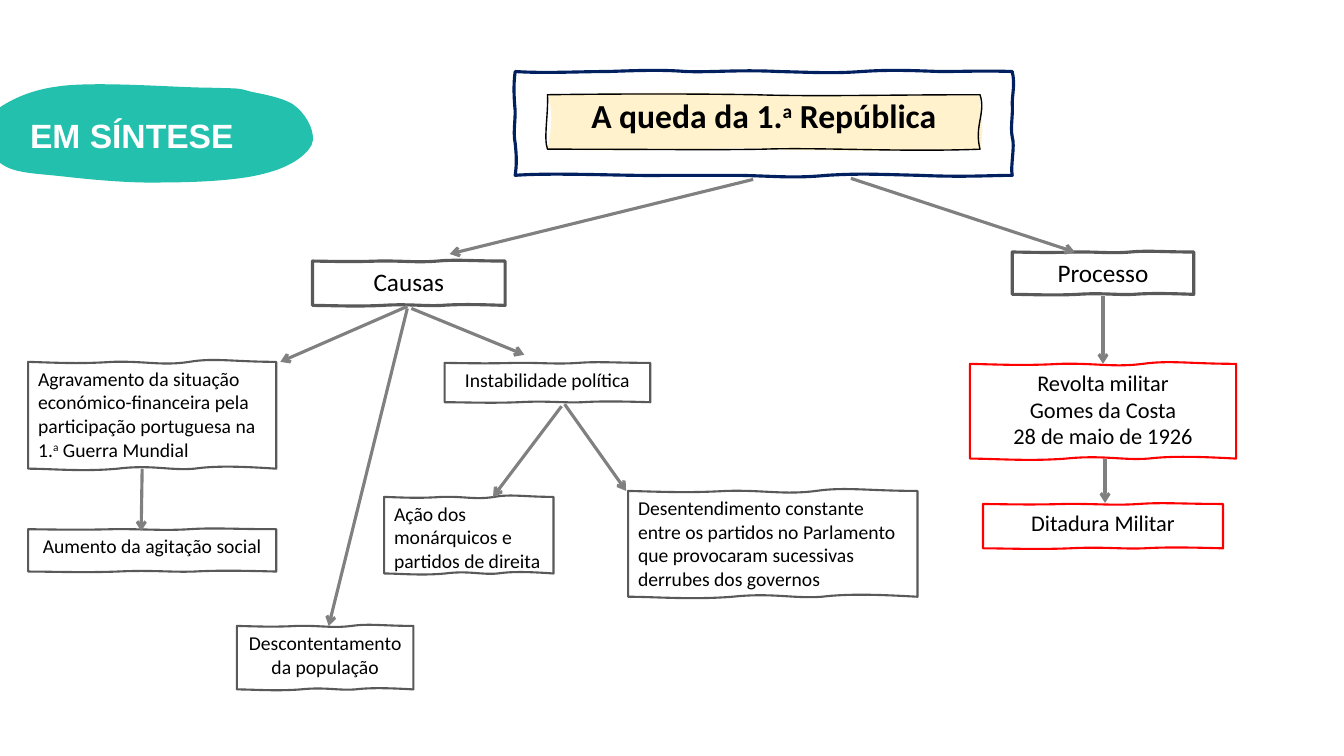
from lxml.etree import SubElement
from pptx import Presentation
from pptx.dml.color import RGBColor
from pptx.enum.shapes import MSO_CONNECTOR as Connector
from pptx.enum.text import MSO_ANCHOR as Anchor, PP_ALIGN as Align
from pptx.oxml.ns import qn
from pptx.util import Inches, Pt

COLOURS = {"teal": "22C0AD", "navy": "002060", "cream": "FFF2CC", "black": "000000",
           "white": "FFFFFF", "grey": "595959", "arrow": "808080", "red": "FF0000"}

# Text between ^ marks is superscript; a line break starts a new paragraph
HEADING = "EM SÍNTESE"
TITLE = "A queda da 1.^a^ República"

# Kinds of box: line colour, line width, text size
KINDS = {"branch": ("grey", 2.25, 18), "cause": ("grey", 1.5, 14), "event": ("red", 1.5, 16)}

# kind, alignment, (left, top, width, height), text
BOXES = [
    ("branch", Align.CENTER, (3.1, 2.59, 1.91, 0.44), "Causas"),
    ("branch", Align.CENTER, (10.04, 2.5, 1.8, 0.42), "Processo"),
    ("cause", Align.LEFT, (0.28, 3.59, 2.46, 1.06),
     "Agravamento da situação económico-financeira pela participação portuguesa na 1.^a^ Guerra Mundial"),
    ("cause", Align.CENTER, (0.28, 5.25, 2.46, 0.42), "Aumento da agitação social"),
    ("cause", Align.CENTER, (2.35, 6.21, 1.75, 0.63), "Descontentamento da população"),
    ("cause", Align.CENTER, (4.41, 3.6, 2.04, 0.39), "Instabilidade política"),
    ("cause", Align.LEFT, (3.81, 4.93, 1.68, 0.76), "Ação dos monárquicos e partidos de direita"),
    ("cause", Align.LEFT, (6.23, 4.87, 2.87, 1.05),
     "Desentendimento constante entre os partidos no Parlamento "
     "que provocaram sucessivas derrubes dos governos"),
    ("event", Align.CENTER, (9.62, 3.61, 2.64, 0.94),
     "Revolta militar\nGomes da Costa\n28 de maio de 1926"),
    ("event", Align.CENTER, (9.75, 5, 2.38, 0.44), "Ditadura Militar"),
]

# x and y of the start, x and y of the head
ARROWS = [
    (7.47, 1.78, 4.46, 2.52), (8.44, 1.77, 10.66, 2.5),
    (4.04, 3.04, 2.78, 3.59), (4.04, 3.06, 3.26, 6.21), (4.08, 3.06, 5.2, 3.52),
    (1.41, 4.65, 1.4, 5.27), (5.57, 4.03, 4.89, 4.93), (5.6, 4.01, 6.21, 4.87),
    (10.94, 2.94, 10.94, 3.61), (10.96, 4.55, 10.96, 4.99),
]

# Hand-drawn outlines: start point, then Bézier curves (two controls and an end)
SKETCH = [(0, 0),  # shares of the box's width and height
          (.13, .01), (.21, .02), (.34, 0), (.47, -.01), (.54, .04), (.65, 0),
          (.75, -.04), (.83, 0), (1, 0), (1, .23), (1, .33), (1, .51),
          (1, .68), (1, .84), (1, 1), (.87, .98), (.76, .97), (.67, 1),
          (.57, 1.02), (.5, .96), (.36, 1), (.22, 1.03), (.09, 1), (0, 1),
          (0, .81), (0, .63), (0, .5), (0, .37), (0, .2), (0, 0)]
BLOB = [(2.07, .87),
        (1.75, .87), (.93, .8), (.56, .86), (.18, .91), (-.09, 1.1), (-.18, 1.23),
        (-.27, 1.36), (-.11, 1.54), (.02, 1.63), (.15, 1.72), (.35, 1.72), (.62, 1.75),
        (.89, 1.78), (1.28, 1.82), (1.62, 1.81), (1.95, 1.81), (2.38, 1.79), (2.63, 1.72),
        (2.87, 1.66), (3.03, 1.55), (3.09, 1.44), (3.14, 1.33), (3.05, 1.16), (2.95, 1.07),
        (2.86, .98), (2.64, .94), (2.49, .91), (2.35, .87), (2.39, .88), (2.07, .87)]
FRAME = [(5.11, .71),
         (5.41, .73), (5.74, .71), (6.03, .71), (6.32, .7), (6.56, .69), (6.8, .71),
         (7.05, .72), (7.33, .69), (7.72, .71), (8.11, .72), (8.26, .73), (8.55, .71),
         (8.83, .69), (9.04, .7), (9.32, .71), (9.6, .71), (9.74, .7), (10.04, .71),
         (10.07, .84), (10.04, .93), (10.04, 1.03), (10.05, 1.13), (10.02, 1.26), (10.04, 1.36),
         (10.07, 1.45), (10.02, 1.65), (10.04, 1.74), (9.84, 1.74), (9.56, 1.76), (9.12, 1.74),
         (8.69, 1.73), (8.53, 1.72), (8.2, 1.74), (7.87, 1.77), (7.74, 1.75), (7.33, 1.74),
         (6.91, 1.74), (6.93, 1.74), (6.6, 1.74), (6.28, 1.75), (5.51, 1.71), (5.11, 1.74),
         (5.13, 1.61), (5.12, 1.52), (5.11, 1.42), (5.09, 1.32), (5.11, 1.22), (5.11, 1.1),
         (5.1, .99), (5.09, .85), (5.11, .71)]
BANNER_FILL = [(5.43, .94),
               (6.1, .93), (6.62, .9), (7.53, .94), (8.44, .98), (9.24, .92), (9.72, .94),
               (9.72, 1.16), (9.77, 1.26), (9.72, 1.48), (8.99, 1.5), (8.1, 1.5), (7.66, 1.48),
               (7.21, 1.45), (6.35, 1.52), (5.43, 1.48), (5.47, 1.3), (5.49, 1.09), (5.43, .94)]
BANNER_EDGE = [(5.43, .94),
               (6.14, .93), (6.86, .93), (7.49, .94), (8.11, .96), (8.78, .94), (9.72, .94),
               (9.78, 1.12), (9.66, 1.25), (9.72, 1.48), (8.96, 1.51), (8.1, 1.46), (7.57, 1.48),
               (7.05, 1.49), (6.42, 1.48), (5.43, 1.48), (5.39, 1.37), (5.44, 1.13), (5.43, .94)]

deck = Presentation()
deck.slide_width, deck.slide_height = Inches(13.33), Inches(7.5)
slide = deck.slides.add_slide(deck.slide_layouts[6])


def colour(name):
    return RGBColor.from_string(COLOURS[name])


def bend(shape, points):
    """Turn each straight side of the freeform into its Bézier curve."""
    sides = list(shape._element.iter(qn("a:lnTo")))
    for i, side in enumerate(sides):
        curve = side.makeelement(qn("a:cubicBezTo"))
        for x, y in points[3 * i + 1:3 * i + 4]:
            SubElement(curve, qn("a:pt"), x=str(x - shape.left), y=str(y - shape.top))
        side.getparent().replace(side, curve)


def draw(outline, fill=None, line=None, width=1):
    points = [(Inches(x), Inches(y)) for x, y in outline]
    builder = slide.shapes.build_freeform(*points[0], scale=1.0)
    builder.add_line_segments(points[3::3], close=True)
    shape = builder.convert_to_shape()
    bend(shape, points)
    shape.shadow.inherit = False
    if fill:
        shape.fill.solid()
        shape.fill.fore_color.rgb = colour(fill)
    else:
        shape.fill.background()
    if line:
        shape.line.color.rgb = colour(line)
        shape.line.width = Pt(width)
    else:
        shape.line.fill.background()
    return shape


def write(shape, text, size, align, bold=False, ink="black", font="Calibri", spacing=None):
    frame = shape.text_frame
    frame.word_wrap = True
    frame.vertical_anchor = Anchor.TOP
    for i, line in enumerate(text.split("\n")):
        paragraph = frame.add_paragraph() if i else frame.paragraphs[0]
        paragraph.alignment = align
        paragraph.line_spacing = spacing
        for j, piece in enumerate(line.split("^")):
            run = paragraph.add_run()
            run.text = piece
            run.font.name, run.font.size, run.font.bold = font, Pt(size), bold
            run.font.color.rgb = colour(ink)
            if j % 2:
                run.font._element.set("baseline", "30000")


# Heading on its teal blob
draw(BLOB, fill="teal")
heading = slide.shapes.add_textbox(*map(Inches, (0.2, 1.09, 2.77, 0.51)))
write(heading, HEADING, 24, Align.LEFT, bold=True, ink="white", font="Arial")

# Framed title
draw(FRAME, line="navy", width=2.25)
draw(BANNER_FILL, fill="cream")
banner = draw(BANNER_EDGE, line="black")
write(banner, TITLE, 24, Align.CENTER, bold=True, spacing=0.9)

# Boxes of the diagram
for kind, align, (left, top, width, height), text in BOXES:
    line, weight, size = KINDS[kind]
    box = draw([(left + u * width, top + v * height) for u, v in SKETCH], line=line, width=weight)
    write(box, text, size, align)

# Arrows
for ends in ARROWS:
    arrow = slide.shapes.add_connector(Connector.STRAIGHT, *map(Inches, ends))
    arrow.line.color.rgb = colour("arrow")
    arrow.line.width = Pt(2.25)
    SubElement(arrow.line._get_or_add_ln(), qn("a:tailEnd"), type="arrow")
    SubElement(arrow._element.spPr, qn("a:effectLst"))

deck.save("out.pptx")
